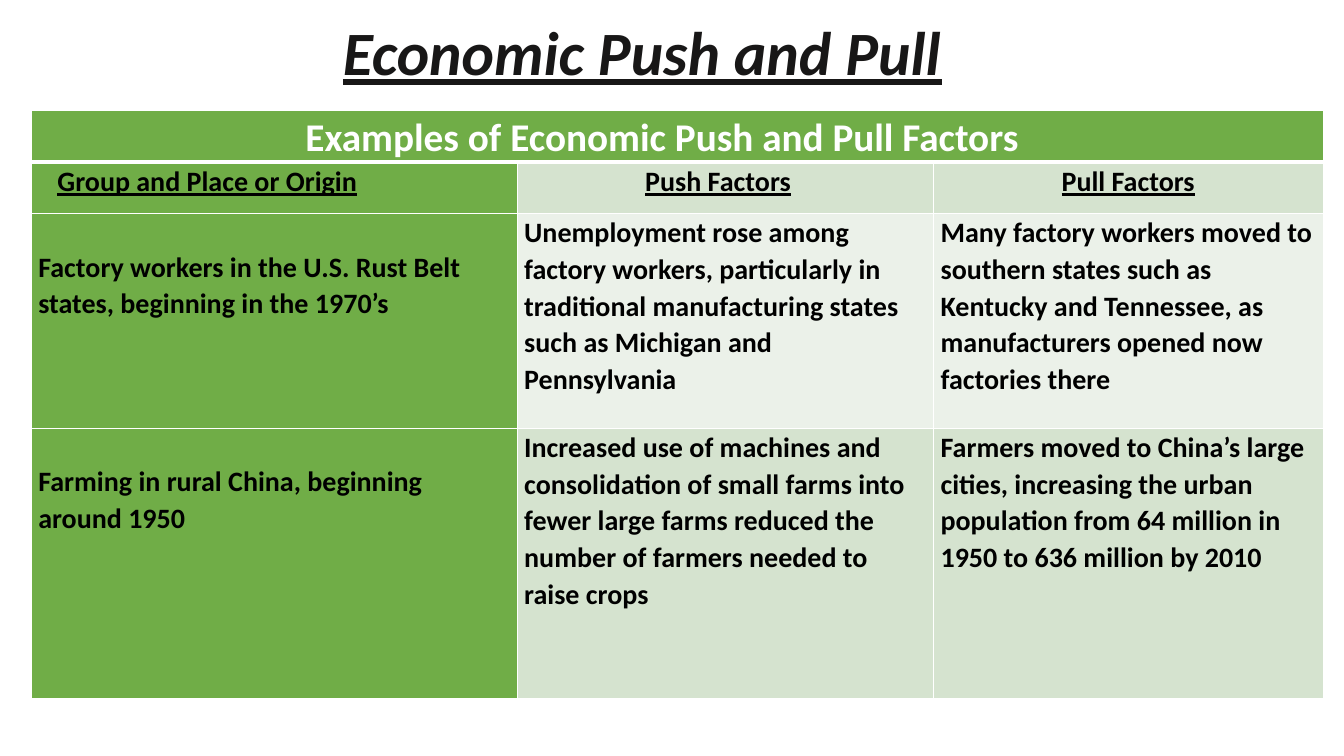
from lxml.etree import SubElement
from pptx import Presentation
from pptx.dml.color import RGBColor
from pptx.enum.text import MSO_ANCHOR, PP_ALIGN
from pptx.oxml.ns import qn
from pptx.util import Inches, Pt

GREEN = RGBColor(0x70, 0xAD, 0x47)
SAGE = RGBColor(0xD5, 0xE3, 0xCF)
MIST = RGBColor(0xEB, 0xF1, 0xE9)
WHITE = RGBColor(0xFF, 0xFF, 0xFF)
BLACK = RGBColor(0, 0, 0)
INK = RGBColor(0x18, 0x17, 0x17)

COLUMNS = [4.82, 4.13, 3.87]
ROWS = [0.51, 0.51, 2.13, 2.68]
ROW_FILLS = [GREEN, SAGE, MIST, SAGE]
PADDING = 0.07
HEADING_INDENTS = [0.19, 1.2, 1.2]
BANNER_INDENT = 2.65
GROUP_DROP = 0.34

FACTORS = [
    ["Examples of Economic Push and Pull Factors", "", ""],
    ["Group and Place or Origin", "Push Factors", "Pull Factors"],
    [
        "Factory workers in the U.S. Rust Belt states, beginning in the 1970’s",
        "Unemployment rose among factory workers, particularly in traditional "
        "manufacturing states such as Michigan and Pennsylvania",
        "Many factory workers moved to southern states such as Kentucky and "
        "Tennessee, as manufacturers opened now factories there",
    ],
    [
        "Farming in rural China, beginning around 1950",
        "Increased use of machines and consolidation of small farms into fewer "
        "large farms reduced the number of farmers needed to raise crops",
        "Farmers moved to China’s large cities, increasing the urban population "
        "from 64 million in 1950 to 636 million by 2010",
    ],
]


def format_text(frame, size, color, spacing):
    para = frame.paragraphs[0]
    para.alignment = PP_ALIGN.LEFT
    para.line_spacing = spacing
    for span in para.runs:
        span.font.name = "Calibri"
        span.font.size = Pt(size)
        span.font.bold = True
        span.font.color.rgb = color
    return para


def add_border(cell, side, width):
    line = SubElement(cell._tc.get_or_add_tcPr(), qn(f"a:{side}"), w=str(Pt(width)))
    fill = SubElement(line, qn("a:solidFill"))
    SubElement(fill, qn("a:srgbClr"), val=str(WHITE))


deck = Presentation()
deck.slide_width, deck.slide_height = Inches(13.33), Inches(7.5)
page = deck.slides.add_slide(deck.slide_layouts[5])

title = page.shapes.title
title.left, title.top = Inches(1.5), Inches(0.15)
title.width, title.height = Inches(11.63), Inches(0.81)
title.text_frame.text = "Economic Push and Pull"
title.text_frame.vertical_anchor = MSO_ANCHOR.MIDDLE
title.text_frame.margin_left = Inches(1.9)
title_span = format_text(title.text_frame, 44, INK, 0.9).runs[0]
title_span.font.italic = True
title_span.font.underline = True

table = page.shapes.add_table(
    len(ROWS), len(COLUMNS), Inches(0.31), Inches(1.1),
    Inches(sum(COLUMNS)), Inches(sum(ROWS)),
).table
for column, width in zip(table.columns, COLUMNS):
    column.width = Inches(width)
for row, height in zip(table.rows, ROWS):
    row.height = Inches(height)
table.cell(0, 0).merge(table.cell(0, 2))

for r, texts in enumerate(FACTORS):
    for c, text in enumerate(texts):
        cell = table.cell(r, c)
        cell.text_frame.text = text
        cell.margin_left = cell.margin_right = Inches(PADDING)
        cell.margin_top = cell.margin_bottom = 0
        para = format_text(
            cell.text_frame, 20 if r else 28, BLACK if r else WHITE, 1.07
        )
        if r == 0:
            cell.margin_left = Inches(PADDING + BANNER_INDENT)
        elif r == 1:
            cell.margin_left = Inches(PADDING + HEADING_INDENTS[c])
            para.runs[0].font.underline = True
        elif c == 0:
            cell.margin_top = Inches(GROUP_DROP)
        for side in ("lnL", "lnR", "lnT", "lnB"):
            thick = (r, side) in ((0, "lnB"), (1, "lnT"))
            add_border(cell, side, 3 if thick else 1)
        cell.fill.solid()
        cell.fill.fore_color.rgb = ROW_FILLS[r] if c else GREEN

deck.save("out.pptx")
